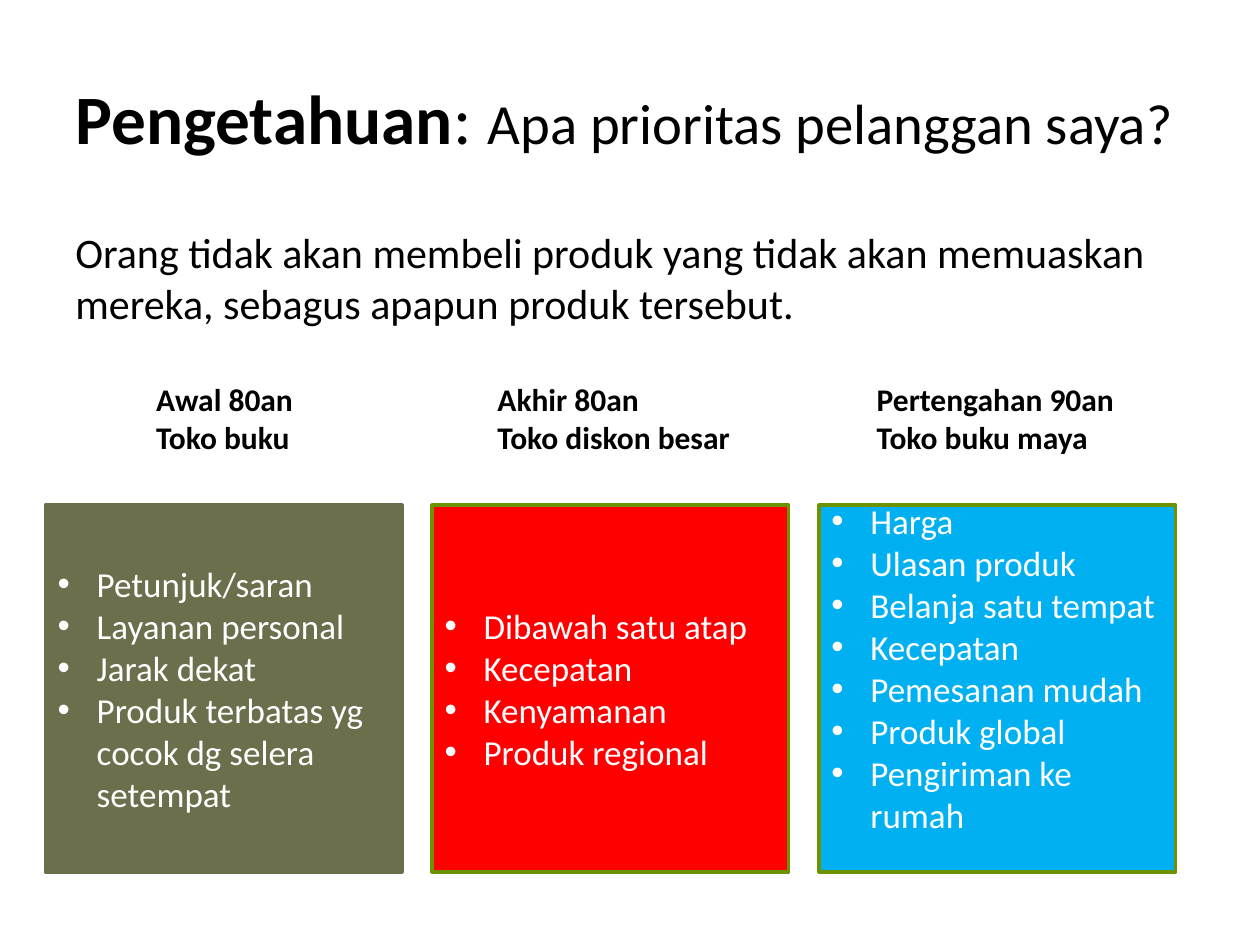
from dataclasses import dataclass

from lxml import etree
from pptx import Presentation
from pptx import util as u
from pptx.dml.color import RGBColor
from pptx.enum import shapes, text
from pptx.oxml.ns import qn

Inches = u.Inches


@dataclass(frozen=True)
class Theme:
    font: str = "Calibri"
    ink: str = "000000"
    light: str = "FFFFFF"
    olive: str = "6C6F4C"
    olive_edge: str = "6B6D4B"
    red: str = "FF0000"
    blue: str = "00B0F0"
    green_edge: str = "6D9200"
    title: float = 39.6
    subtitle: float = 32.4
    body: float = 24
    card: float = 20
    caption: float = 18


THEME = Theme()
CARD_TOP, CARD_WIDTH, CARD_HEIGHT = 4.01, 2.83, 2.91
CARD_LEFT, CARD_STEP = 0.36, 3.07
CAPTION_TOP, CAPTION_HEIGHT = 2.97, 0.71

# caption, caption left and width, fill, edge, bullets, bottom inset
ERAS = [
    (["Awal 80an", "Toko buku"], 1.14, 1.3, THEME.olive, THEME.olive_edge,
     ["Petunjuk/saran", "Layanan personal", "Jarak dekat",
      "Produk terbatas yg cocok dg selera setempat"], 0.05),
    (["Akhir 80an", "Toko diskon besar"], 3.85, 2.06, THEME.red, THEME.green_edge,
     ["Dibawah satu atap", "Kecepatan", "Kenyamanan", "Produk regional"], 0.05),
    (["Pertengahan 90an", "Toko buku maya"], 6.86, 2.1, THEME.blue, THEME.green_edge,
     ["Harga", "Ulasan produk", "Belanja satu tempat", "Kecepatan",
      "Pemesanan mudah", "Produk global", "Pengiriman ke rumah"], 0.38),
]


def style_font(font, size, color, bold=False):
    font.name, font.size, font.bold = THEME.font, u.Pt(size), bold
    font.color.rgb = RGBColor.from_string(color)


def add_bullet(para):
    props = para._p.get_or_add_pPr()
    props.set("marL", str(Inches(0.31)))
    props.set("indent", str(-Inches(0.31)))
    etree.SubElement(props, qn("a:buFont")).set("typeface", "Arial")
    etree.SubElement(props, qn("a:buChar")).set("char", "•")


def write_lines(frame, lines, size, color, bold=False, bullets=False):
    for index, line in enumerate(lines):
        para = frame.add_paragraph() if index else frame.paragraphs[0]
        para.text = line
        para.alignment = text.PP_ALIGN.LEFT
        if bullets:
            add_bullet(para)
        style_font(para.font, size, color, bold)


def place_title(page, left, top, width, height):
    title = page.shapes.title
    title.left, title.top, title.width, title.height = left, top, width, height
    frame = title.text_frame
    frame.auto_size = text.MSO_AUTO_SIZE.NONE
    frame.vertical_anchor = text.MSO_ANCHOR.MIDDLE
    para = frame.paragraphs[0]
    para.alignment = text.PP_ALIGN.LEFT
    for words, size, bold in [("Pengetahuan", THEME.title, True),
                              (": ", THEME.title, False),
                              ("Apa prioritas pelanggan saya?", THEME.subtitle, False)]:
        span = para.add_run()
        span.text = words
        style_font(span.font, size, THEME.ink, bold)


def add_statement(page, left, top, width, height):
    frame = page.shapes.add_textbox(left, top, width, height).text_frame
    frame.word_wrap = True
    write_lines(frame, ["Orang tidak akan membeli produk yang tidak akan memuaskan "
                        "mereka, sebagus apapun produk tersebut."],
                THEME.body, THEME.ink)


def add_caption(page, lines, left, top, width, height):
    frame = page.shapes.add_textbox(left, top, width, height).text_frame
    frame.word_wrap = False
    frame.auto_size = text.MSO_AUTO_SIZE.SHAPE_TO_FIT_TEXT
    write_lines(frame, lines, THEME.caption, THEME.ink, bold=True)


def add_card(page, items, fill, edge, inset, left, top, width, height):
    card = page.shapes.add_shape(shapes.MSO_SHAPE.RECTANGLE, left, top, width, height)
    card.shadow.inherit = False
    card.fill.solid()
    card.fill.fore_color.rgb = RGBColor.from_string(fill)
    card.line.color.rgb = RGBColor.from_string(edge)
    card.line.width = u.Pt(2)
    frame = card.text_frame
    frame.word_wrap = True
    frame.vertical_anchor = text.MSO_ANCHOR.MIDDLE
    frame.margin_bottom = inset
    write_lines(frame, items, THEME.card, THEME.light, bullets=True)


def build_page(deck):
    page = deck.slides.add_slide(deck.slide_layouts[5])
    place_title(page, Inches(0.5), Inches(0.3), Inches(9), Inches(1.25))
    add_statement(page, Inches(0.5), Inches(1.75), Inches(9), Inches(1.06))
    for index, (caption, left, width, fill, edge, items, inset) in enumerate(ERAS):
        add_card(page, items, fill, edge, Inches(inset),
                 Inches(CARD_LEFT + index * CARD_STEP), Inches(CARD_TOP),
                 Inches(CARD_WIDTH), Inches(CARD_HEIGHT))
        add_caption(page, caption, Inches(left), Inches(CAPTION_TOP),
                    Inches(width), Inches(CAPTION_HEIGHT))


def main():
    deck = Presentation()
    deck.slide_width, deck.slide_height = Inches(10), Inches(7.5)
    build_page(deck)
    deck.save("out.pptx")


if __name__ == "__main__":
    main()
